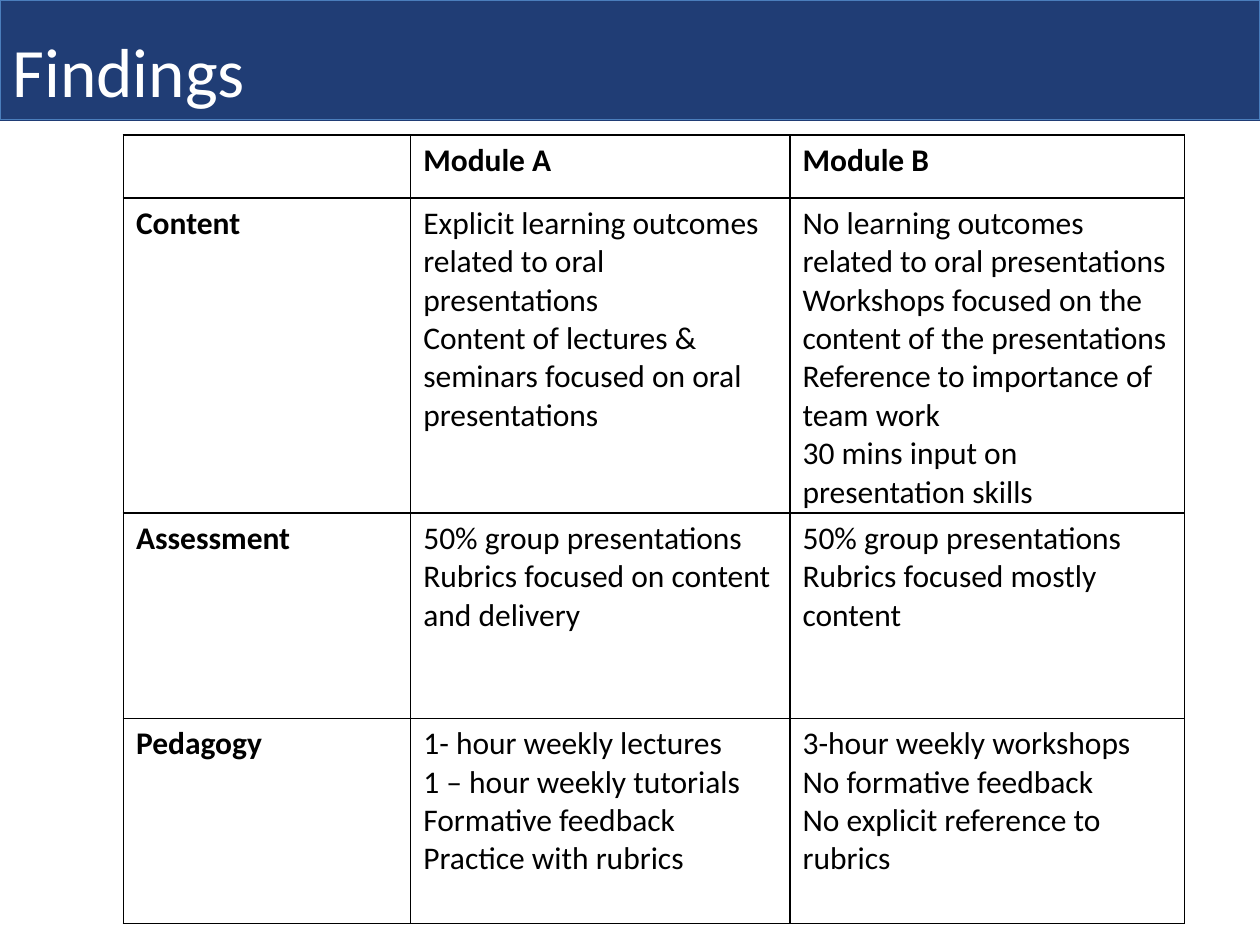
from lxml import etree
from pptx import Presentation
from pptx.dml.color import RGBColor
from pptx.enum.shapes import MSO_CONNECTOR, MSO_SHAPE
from pptx.enum.text import MSO_ANCHOR
from pptx.oxml import parse_xml
from pptx.oxml.ns import nsdecls, qn
from pptx.util import Inches, Pt

NAVY = RGBColor(0x20, 0x3D, 0x75)
BLUE = RGBColor(0x4B, 0x7E, 0xBC)
WHITE = RGBColor(0xFF, 0xFF, 0xFF)
BLACK = RGBColor(0, 0, 0)

COLUMN_WIDTHS = [22.8, 30.1, 31.3]
ROW_HEIGHTS = [5, 22.9, 16.3, 16.3]
FINDINGS = [
    [[""], ["Module A"], ["Module B"]],
    [["Content"],
     ["Explicit learning outcomes related to oral presentations",
      "Content of lectures & seminars focused on oral presentations"],
     ["No learning outcomes related to oral presentations",
      "Workshops focused on the content of the presentations",
      "Reference to importance of team work",
      "30 mins input on presentation skills"]],
    [["Assessment"],
     ["50% group presentations",
      "Rubrics focused on content and delivery"],
     ["50% group presentations",
      "Rubrics focused mostly content"]],
    [["Pedagogy"],
     ["1- hour weekly lectures",
      "1 – hour weekly tutorials",
      "Formative feedback",
      "Practice with rubrics"],
     ["3-hour weekly workshops",
      "No formative feedback",
      "No explicit reference to rubrics"]],
]


def write(frame, lines, size=18, color=BLACK, bold=False):
    """Fill a text frame with one paragraph per line."""
    frame.word_wrap = True
    for number, line in enumerate(lines):
        para = frame.add_paragraph() if number else frame.paragraphs[0]
        para.font.size = Pt(size)
        if line:
            span = para.add_run()
            span.text = line
            span.font.name = "Calibri"
            span.font.size = Pt(size)
            span.font.bold = bold
            span.font.color.rgb = color


def add_borders(cell, color=BLACK, width=1):
    """Draw a solid line on all four sides of a table cell."""
    for position, side in enumerate(["lnL", "lnR", "lnT", "lnB"]):
        border = parse_xml(
            f'<a:{side} {nsdecls("a")} w="{Pt(width)}"><a:solidFill>'
            f'<a:srgbClr val="{color}"/></a:solidFill></a:{side}>')
        cell._tc.get_or_add_tcPr().insert(position, border)


deck = Presentation()
deck.slide_width, deck.slide_height = Inches(10), Inches(7.5)
page = deck.slides.add_slide(deck.slide_layouts[6])

# The page is a grid of 100 columns by 75 rows
COL = deck.slide_width / 100
ROW = deck.slide_height / 75

# Title band with its lower edge
band = page.shapes.add_shape(MSO_SHAPE.RECTANGLE, 0, 0, deck.slide_width, int(9.5 * ROW))
band.shadow.inherit = False
band.fill.solid()
band.fill.fore_color.rgb = NAVY
band.line.color.rgb = BLUE
band.line.width = Pt(0.75)

edge_top = int(9.6 * ROW)
edge = page.shapes.add_connector(
    MSO_CONNECTOR.STRAIGHT, 0, edge_top, deck.slide_width, edge_top)
edge.line.color.rgb = NAVY
edge.line.width = Pt(0.5)
etree.SubElement(edge._element.spPr, qn("a:effectLst"))

title = page.shapes.add_textbox(0, int(2.7 * ROW), int(75.2 * COL), int(5.7 * ROW))
title.text_frame.vertical_anchor = MSO_ANCHOR.MIDDLE
write(title.text_frame, ["Findings"], size=39.6, color=WHITE)

# Comparison of the two modules
table = page.shapes.add_table(
    len(ROW_HEIGHTS), len(COLUMN_WIDTHS), int(9.8 * COL), int(10.7 * ROW),
    int(sum(COLUMN_WIDTHS) * COL), int(sum(ROW_HEIGHTS) * ROW)).table
table.first_row = table.horz_banding = False
for column, width in zip(table.columns, COLUMN_WIDTHS):
    column.width = int(width * COL)
for row, height in zip(table.rows, ROW_HEIGHTS):
    row.height = int(height * ROW)

for r, entries in enumerate(FINDINGS):
    for c, lines in enumerate(entries):
        cell = table.cell(r, c)
        cell.fill.background()
        add_borders(cell)
        write(cell.text_frame, lines, bold=r == 0 or c == 0)

deck.save("out.pptx")
